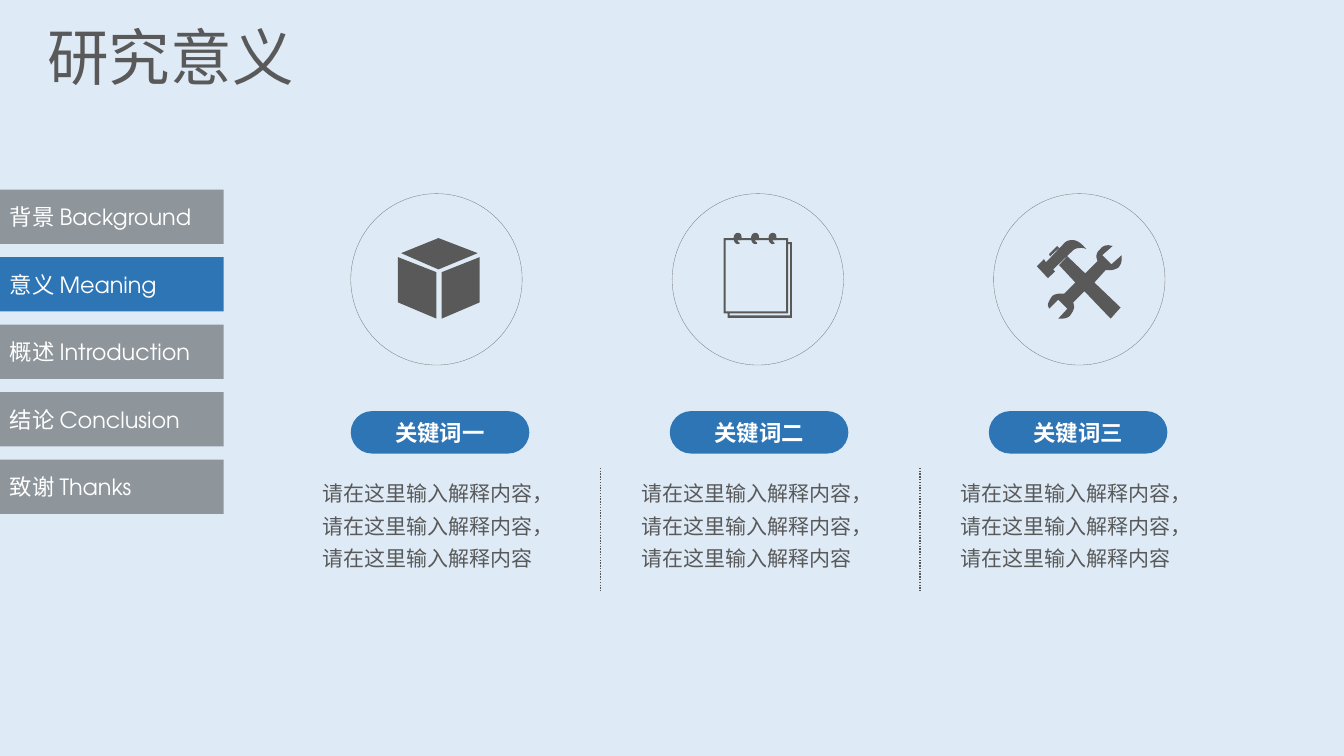
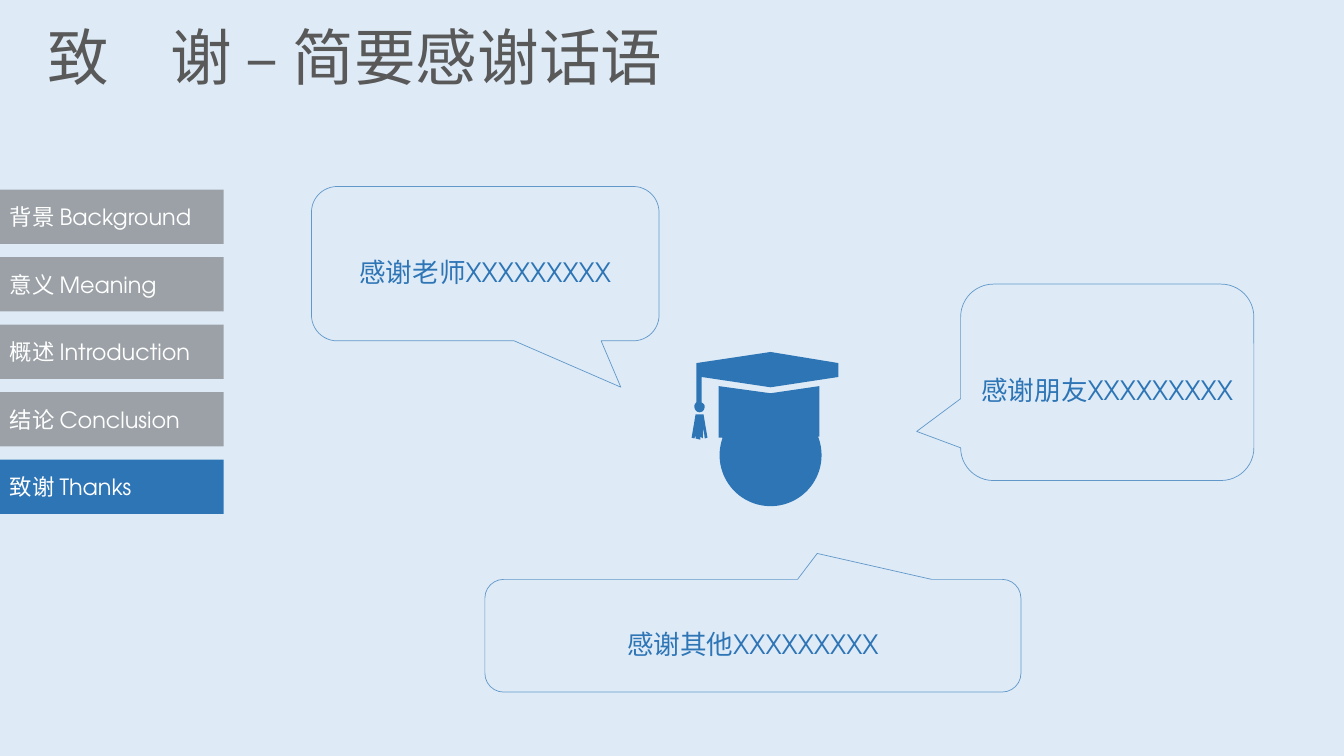
from lxml.etree import SubElement
from pptx import Presentation
from pptx.dml.color import RGBColor
from pptx.enum.dml import MSO_LINE
from pptx.enum.shapes import MSO_CONNECTOR, MSO_SHAPE
from pptx.enum.text import MSO_ANCHOR, MSO_AUTO_SIZE, PP_ALIGN
from pptx.oxml.ns import qn
from pptx.util import Cm, Pt

SKY = RGBColor(0xDE, 0xEB, 0xF7)
BLUE = RGBColor(0x2E, 0x75, 0xB6)
INK = RGBColor(0x59, 0x59, 0x59)
DARK = RGBColor(0x40, 0x40, 0x40)
GRAY = RGBColor(0x80, 0x80, 0x80)
WHITE = RGBColor(0xFF, 0xFF, 0xFF)
LATIN = "TeX Gyre Adventor"
HAN = "Noto Sans CJK SC"

NAV = ["背景 Background", "意义 Meaning", "概述 Introduction",
       "结论 Conclusion", "致谢 Thanks"]
NOTE = "请在这里输入解释内容，请在这里输入解释内容，请在这里输入解释内容"

# Icons: parts made of outlines, in cm from the icon's centre.
# A pair is a corner; six numbers are a Bézier curve.
CUBE = [[
    [(.05, -1.04), (-.89, -.66), (.05, -.25), (1.04, -.66)],
    [(-.97, .58), (0, .99), (0, -.18), (-.97, -.56)],
    [(.13, -.18), (.13, .99), (1.09, .58), (1.09, -.56)],
]]
PAGES = [
    [(-.86, -1.04), (.76, -1.04), (.76, .86), (-.86, .86)],
    [(-.81, -.99), (.71, -.99), (.71, .81), (-.81, .81)],
    [(.76, -.94), (.86, -.94), (.86, .97), (-.76, .97), (-.76, .86),
     (-.71, .86), (-.71, .91), (.81, .91), (.81, -.89), (.76, -.89)],
]
RING = [(.1, .05), (.1, 0), (.1, -.08, .08, -.13, 0, -.13),
        (-.05, -.13, -.1, -.08, -.1, 0), (-.1, .1, -.05, .15, 0, .15),
        (.03, .15, .05, .15, .05, .13), (.05, .1, 0, .1, 0, .05)]
RINGS = [(-.51, -1.04), (-.07, -1.04), (.37, -1.04)]
TOOLS = [[
    [(-.56, -.84), (-.51, -.79), (-.74, -.58), (-.76, -.64)],
    [(.74, -.86), (.84, -.84), (.58, -.61), (.81, -.38), (1.07, -.61),
     (1.07, -.53), (1.07, -.43, 1.04, -.36, .99, -.3),
     (.91, -.25, .84, -.23, .76, -.23), (.66, -.23), (.38, .08),
     (1.04, .71), (.79, .99), (.13, .3), (-.15, .58), (-.13, .69),
     (-.13, .76, -.18, .84, -.23, .91), (-.28, .97, -.36, .99, -.46, .99),
     (-.53, .99), (-.3, .74), (-.53, .51), (-.76, .74), (-.79, .66),
     (-.79, .58, -.74, .51, -.69, .43), (-.64, .38, -.56, .36, -.46, .36),
     (-.38, .36), (-.1, .08), (-.51, -.36), (-.3, -.58), (.15, -.15),
     (.46, -.46), (.43, -.56), (.43, -.64, .46, -.71, .53, -.76),
     (.58, -.84, .66, -.86, .74, -.86)],
    [(-.18, -.99), (-.05, -.99, .05, -.91, .18, -.76),
     (.13, -.79, .08, -.79, .03, -.79), (-.08, -.79, -.13, -.76, -.18, -.71),
     (-.66, -.25), (-.61, -.2), (-.79, -.03), (-1.07, -.33), (-.89, -.51),
     (-.84, -.43), (-.38, -.91), (-.33, -.97, -.25, -.99, -.18, -.99)],
]]
CAP = [
    [(1.71, -2.32), (0, -2.6), (-1.87, -2.32), (-1.87, -1.33),
     (-1.9, -1.3, -1.92, -1.27, -1.92, -1.23),
     (-1.92, -1.15, -1.87, -1.08, -1.79, -1.08),
     (-1.71, -1.08, -1.66, -1.15, -1.66, -1.23),
     (-1.66, -1.27, -1.69, -1.3, -1.74, -1.33),
     (-1.74, -1.97), (0, -1.71), (1.71, -1.97)],
    [(-1.69, -1.03), (-1.89, -1.03), (-1.99, -.44), (-1.92, -.42),
     (-1.89, -.5), (-1.89, -.42), (-1.77, -.39), (-1.77, -.47),
     (-1.71, -.42), (-1.69, -.7), (-1.66, -.42), (-1.59, -.44)],
    [(-1.31, -.44), (-1.31, -1.74), (0, -1.56), (1.23, -1.74), (1.23, -.47),
     (.8, -.47, .39, -.34, 0, -.17), (-.42, -.37, -.87, -.44, -1.31, -.44)],
]

KEYS = [("关键词一", CUBE), ("关键词二", [PAGES]), ("关键词三", TOOLS)]
# Text, box in cm, tip of the callout
THANKS = [
    ("感谢老师XXXXXXXXX", (7.85, 4.7, 8.76, 3.89), (.39, .8)),
    ("感谢朋友XXXXXXXXX", (24.21, 7.16, 7.39, 4.95), (-.65, .25)),
    ("感谢其他XXXXXXXXX", (12.22, 14.6, 13.51, 2.84), (.12, -.73)),
]


def fade(fill, share):
    """Make a solid a:solidFill element partly transparent."""
    SubElement(fill[0], qn("a:alpha"), val=str(share * 1000))


def write(shape, text, size, color, face=LATIN, bold=False,
          align=PP_ALIGN.LEFT, anchor=MSO_ANCHOR.MIDDLE, space=1.0):
    frame = shape.text_frame
    frame.word_wrap = True
    frame.auto_size = MSO_AUTO_SIZE.NONE
    frame.vertical_anchor = anchor
    frame.text = text
    para = frame.paragraphs[0]
    para.alignment = align
    para.line_spacing = space
    font = para.font
    font.size, font.bold, font.name = Pt(size), bold, face
    font.color.rgb = color
    props = para._p.pPr.find(qn("a:defRPr"))
    SubElement(props, qn("a:ea"), typeface=HAN)
    return frame


def draw(slide, kind, box, fill=None, line=None, width=0.25):
    shape = slide.shapes.add_shape(kind, *map(Cm, box))
    paint(shape, fill)
    if line is not None:
        shape.line.color.rgb = line
        shape.line.width = Pt(width)
    return shape


def paint(shape, fill):
    shape.shadow.inherit = False
    shape.line.fill.background()
    if fill is None:
        shape.fill.background()
    else:
        shape.fill.solid()
        shape.fill.fore_color.rgb = fill


def flatten(outline, steps=8):
    """Turn corners and curves into a list of points."""
    points = []
    for mark in outline:
        if len(mark) == 2:
            points.append(mark)
            continue
        ends = [points[-1], mark[:2], mark[2:4], mark[4:]]
        for i in range(1, steps + 1):
            t = i / steps
            parts = ((1 - t) ** 3, 3 * t * (1 - t) ** 2,
                     3 * t * t * (1 - t), t ** 3)
            points.append(tuple(sum(w * p[axis] for w, p in zip(parts, ends))
                                for axis in (0, 1)))
    return [(Cm(x), Cm(y)) for x, y in points]


def trace(slide, outlines, x, y, fill):
    """Draw outlines as one freeform around the point x, y."""
    first, *rest = map(flatten, outlines)
    pen = slide.shapes.build_freeform(*first[0], scale=1.0)
    pen.add_line_segments(first[1:], close=True)
    for points in rest:
        pen.move_to(*points[0])
        pen.add_line_segments(points[1:], close=True)
    paint(pen.convert_to_shape(Cm(x), Cm(y)), fill)


def start(deck, title, active, idle):
    """Add a slide with its title and the side menu."""
    slide = deck.slides.add_slide(deck.slide_layouts[5])
    head = slide.shapes.title
    head.left, head.top, head.width, head.height = map(
        Cm, (0.94, 0.56, 29.21, 2.03))
    write(head, title, 44, INK, anchor=MSO_ANCHOR.TOP, space=0.9)
    for i, label in enumerate(NAV):
        on = i == active
        tab = draw(slide, MSO_SHAPE.RECTANGLE, (0, 4.78 + 1.7 * i, 5.64, 1.37),
                   BLUE if on else idle)
        if not on:
            fade(tab._element.spPr.find(qn("a:solidFill")), 50)
        write(tab, label, 16, WHITE)
    return slide


def meaning(deck):
    slide = start(deck, "研究意义", 1, DARK)
    for i, (key, icon) in enumerate(KEYS):
        x, y, size = 11 + 8.1 * i, 7.04, 4.32
        draw(slide, MSO_SHAPE.OVAL, (x - size / 2, y - size / 2, size, size),
             line=GRAY)
        for part in icon:
            trace(slide, part, x, y, INK)
        if icon == [PAGES]:
            for dx, dy in RINGS:
                trace(slide, [RING], x + dx, y + dy, INK)

        shift = 8.04 * i
        pill = draw(slide, MSO_SHAPE.ROUNDED_RECTANGLE,
                    (8.84 + shift, 10.36, 4.5, 1.07), BLUE)
        pill.adjustments[0] = 0.5
        frame = write(pill, key, 16, WHITE, HAN, True, PP_ALIGN.CENTER,
                      space=1.3)
        frame.margin_top, frame.margin_bottom = 0, Cm(0.18)

        note = slide.shapes.add_textbox(
            *map(Cm, (7.87 + shift, 11.79, 6.53, 2.72)))
        write(note, NOTE, 15, INK, HAN, anchor=MSO_ANCHOR.TOP, space=1.3)
        if i:
            edge = 7.1 + shift
            rule = slide.shapes.add_connector(
                MSO_CONNECTOR.STRAIGHT,
                *map(Cm, (edge, 11.79, edge, 14.88)))
            rule.line.color.rgb = INK
            rule.line.width = Pt(1)
            rule.line.dash_style = MSO_LINE.ROUND_DOT
            SubElement(rule._element.spPr, qn("a:effectLst"))


def thanks(deck):
    slide = start(deck, "致　谢 – 简要感谢话语", 4, INK)
    for text, box, tip in THANKS:
        bubble = draw(slide, MSO_SHAPE.ROUNDED_RECTANGULAR_CALLOUT, box,
                      line=BLUE, width=0.5)
        bubble.adjustments[0], bubble.adjustments[1] = tip
        fade(bubble.line._ln.find(qn("a:solidFill")), 70)
        write(bubble, text, 19, BLUE, align=PP_ALIGN.CENTER, space=1.5)
    x, y, size = 19.42, 11.47, 2.57
    draw(slide, MSO_SHAPE.OVAL, (x - size / 2, y - size / 2, size, size), BLUE)
    trace(slide, CAP, x, y, BLUE)


def main():
    deck = Presentation()
    deck.slide_width, deck.slide_height = Cm(33.87), Cm(19.05)
    back = deck.slide_master.background.fill
    back.solid()
    back.fore_color.rgb = SKY
    meaning(deck)
    thanks(deck)
    deck.save("out.pptx")


if __name__ == "__main__":
    main()
